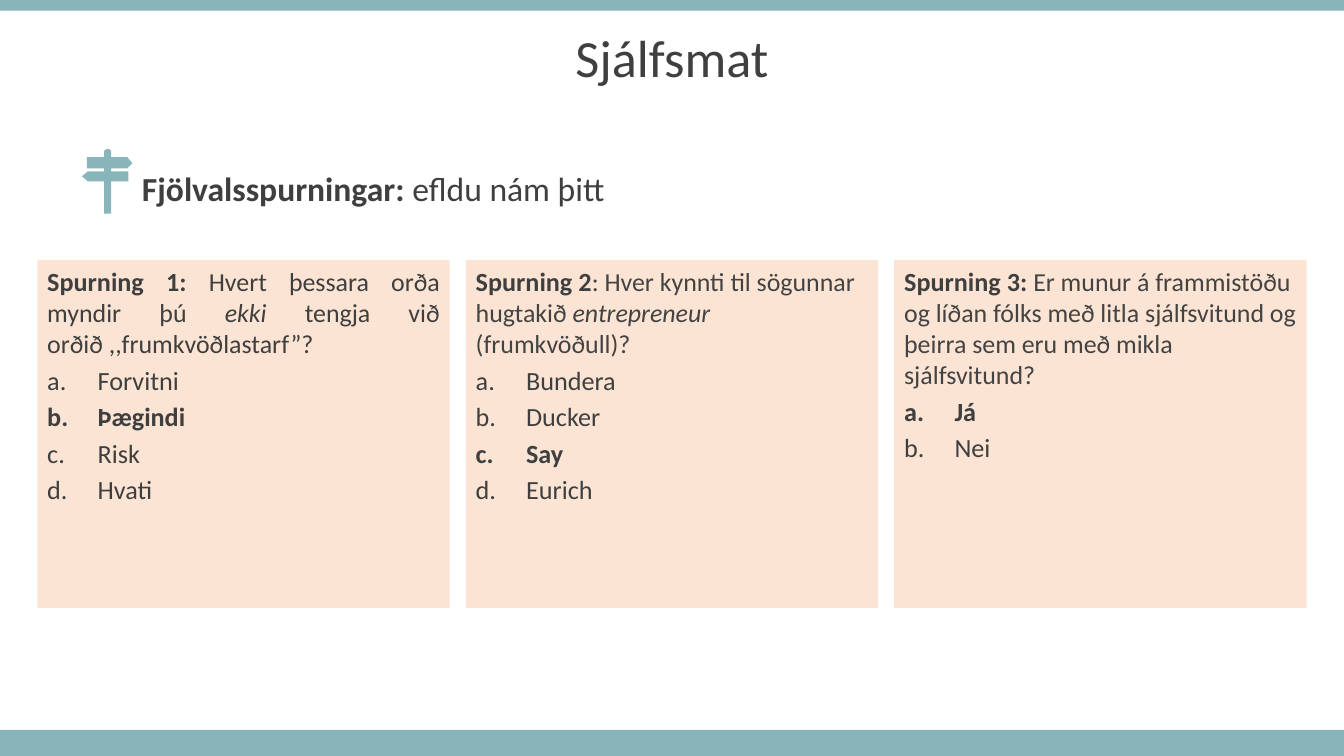
from dataclasses import dataclass
from math import cos, pi, sin

from lxml.etree import SubElement
from pptx import Presentation
from pptx.dml.color import RGBColor
from pptx.enum.shapes import MSO_SHAPE
from pptx.enum.text import MSO_ANCHOR, PP_ALIGN
from pptx.oxml.ns import qn
from pptx.util import Inches, Pt

COLORS = {"teal": "87B5BA", "peach": "FBE4D4", "ink": "3F3F3F", "question": "434343"}
FONT = "Calibri"
SLIDE_W, SLIDE_H = Inches(13.333), Inches(7.5)

# Card row, in percent of the slide's width and height
CARD_LEFT, CARD_PITCH, CARD_WIDTH = 2.78, 31.88, 30.68
CARD_TOP, CARD_HEIGHT = 34.4, 46


@dataclass
class Box:
    """A place on the slide, in percent of its width and height."""
    left: float
    top: float
    width: float
    height: float

    def emu(self) -> tuple:
        return (across(self.left), down(self.top),
                across(self.width), down(self.height))


@dataclass
class Piece:
    text: str
    size: float = 18.5
    bold: bool = False
    italic: bool = False
    color: str = "question"


@dataclass
class Question:
    pieces: list
    answers: list
    correct: str
    align: PP_ALIGN = PP_ALIGN.LEFT


def across(percent: float) -> int:
    return round(SLIDE_W * percent / 100)


def down(percent: float) -> int:
    return round(SLIDE_H * percent / 100)


def rgb(name: str) -> RGBColor:
    return RGBColor.from_string(COLORS[name])


def paint(shape, color: str) -> None:
    shape.shadow.inherit = False
    shape.fill.solid()
    shape.fill.fore_color.rgb = rgb(color)
    shape.line.fill.background()


def add_block(slide, box: Box, color: str):
    block = slide.shapes.add_shape(MSO_SHAPE.RECTANGLE, *box.emu())
    paint(block, color)
    return block


def write_pieces(paragraph, pieces: list, align: PP_ALIGN) -> None:
    paragraph.alignment = align
    paragraph.font.name = FONT
    for piece in pieces:
        run = paragraph.add_run()
        run.text = piece.text
        run.font.name = FONT
        run.font.size = Pt(piece.size)
        run.font.bold = piece.bold
        run.font.italic = piece.italic
        run.font.color.rgb = rgb(piece.color)


def add_line(slide, box: Box, pieces: list, align: PP_ALIGN, spacing: float) -> None:
    frame = slide.shapes.add_textbox(*box.emu()).text_frame
    frame.word_wrap = True
    frame.vertical_anchor = MSO_ANCHOR.MIDDLE
    write_pieces(frame.paragraphs[0], pieces, align)
    frame.paragraphs[0].line_spacing = spacing


def letter_answer(paragraph) -> None:
    properties = paragraph._p.get_or_add_pPr()
    properties.set("marL", str(Inches(0.5)))
    properties.set("indent", str(-Inches(0.5)))
    bullet_color = SubElement(properties, qn("a:buClr"))
    SubElement(bullet_color, qn("a:srgbClr"), val=COLORS["ink"])
    SubElement(properties, qn("a:buFont"), typeface=FONT)
    SubElement(properties, qn("a:buAutoNum"), type="alphaLcPeriod")


def add_question(slide, column: int, question: Question) -> None:
    place = Box(CARD_LEFT + column * CARD_PITCH, CARD_TOP, CARD_WIDTH, CARD_HEIGHT)
    frame = add_block(slide, place, "peach").text_frame
    frame.word_wrap = True
    frame.vertical_anchor = MSO_ANCHOR.TOP
    write_pieces(frame.paragraphs[0], question.pieces, question.align)
    for answer in question.answers:
        line = frame.add_paragraph()
        line.space_before = Pt(3.7)
        letter_answer(line)
        piece = Piece(answer, 18.7, bold=answer == question.correct, color="ink")
        write_pieces(line, [piece], PP_ALIGN.LEFT)


def add_signpost(slide, box: Box) -> None:
    """Draw the post and its two arms on a grid 50 cells wide."""
    middle, radius = 25.5, 3.5
    post_left, post_right = middle - radius, middle + radius
    cap = [(middle - radius * cos(step * pi / 12), radius - radius * sin(step * pi / 12))
           for step in range(13)]
    right_arm = [(post_right, 8), (45, 8), (50, 13.5), (45, 19), (post_right, 19)]
    left_arm = [(post_right, 22), (46, 22), (46, 32), (post_right, 32)]
    foot = [(post_right, 64), (post_left, 64)]
    left_side = [(post_left, 32), (6, 32), (0, 27), (6, 22), (post_left, 22),
                 (post_left, 19), (5, 19), (5, 8), (post_left, 8)]
    outline = cap + right_arm + left_arm + foot + left_side
    left, top, width, _ = box.emu()
    builder = slide.shapes.build_freeform(*outline[0], scale=width / 50)
    builder.add_line_segments(outline[1:], close=True)
    paint(builder.convert_to_shape(left, top), "teal")


QUESTIONS = [
    Question([Piece("Spurning 1: ", 18.7, bold=True, color="ink"),
              Piece("Hvert þessara orða myndir þú ", color="ink"),
              Piece("ekki ", italic=True, color="ink"),
              Piece("tengja við orðið ,,frumkvöðlastarf”?", color="ink")],
             ["Forvitni", "Þægindi", "Risk", "Hvati"], "Þægindi", PP_ALIGN.JUSTIFY),
    Question([Piece("Spurning 2", 18.7, bold=True, color="ink"),
              Piece(": Hver kynnti til sögunnar hugtakið "),
              Piece("entrepreneur ", italic=True),
              Piece("(frumkvöðull)?")],
             ["Bundera", "Ducker", "Say", "Eurich"], "Say"),
    Question([Piece("Spurning 3:", 18.7, bold=True, color="ink"),
              Piece(" ", bold=True),
              Piece("Er munur á frammistöðu og líðan fólks með litla sjálfsvitund "
                    "og þeirra sem eru með mikla sjálfsvitund?")],
             ["Já", "Nei"], "Já"),
]


def main() -> None:
    deck = Presentation()
    deck.slide_width, deck.slide_height = SLIDE_W, SLIDE_H
    slide = deck.slides.add_slide(deck.slide_layouts[6])

    # Bands along the bottom and top edges
    for band in (Box(0, 96.53, 100, 3.47), Box(0, 0, 100, 1.4)):
        add_block(slide, band, "teal")

    # Title and heading with its signpost
    add_line(slide, Box(0, 2.4, 100, 11.2),
             [Piece("Sjálfsmat", 37.3, color="ink")], PP_ALIGN.CENTER, 0.9)
    add_line(slide, Box(9.83, 22.8, 66.9, 5.47),
             [Piece("Fjölvalsspurningar: ", 24, bold=True, color="ink"),
              Piece("efldu nám þitt", 24, color="ink")], PP_ALIGN.LEFT, 0.7)
    add_signpost(slide, Box(6.1, 19.73, 3.75, 8.53))

    # Question cards
    for column, question in enumerate(QUESTIONS):
        add_question(slide, column, question)

    deck.save("out.pptx")


if __name__ == "__main__":
    main()
